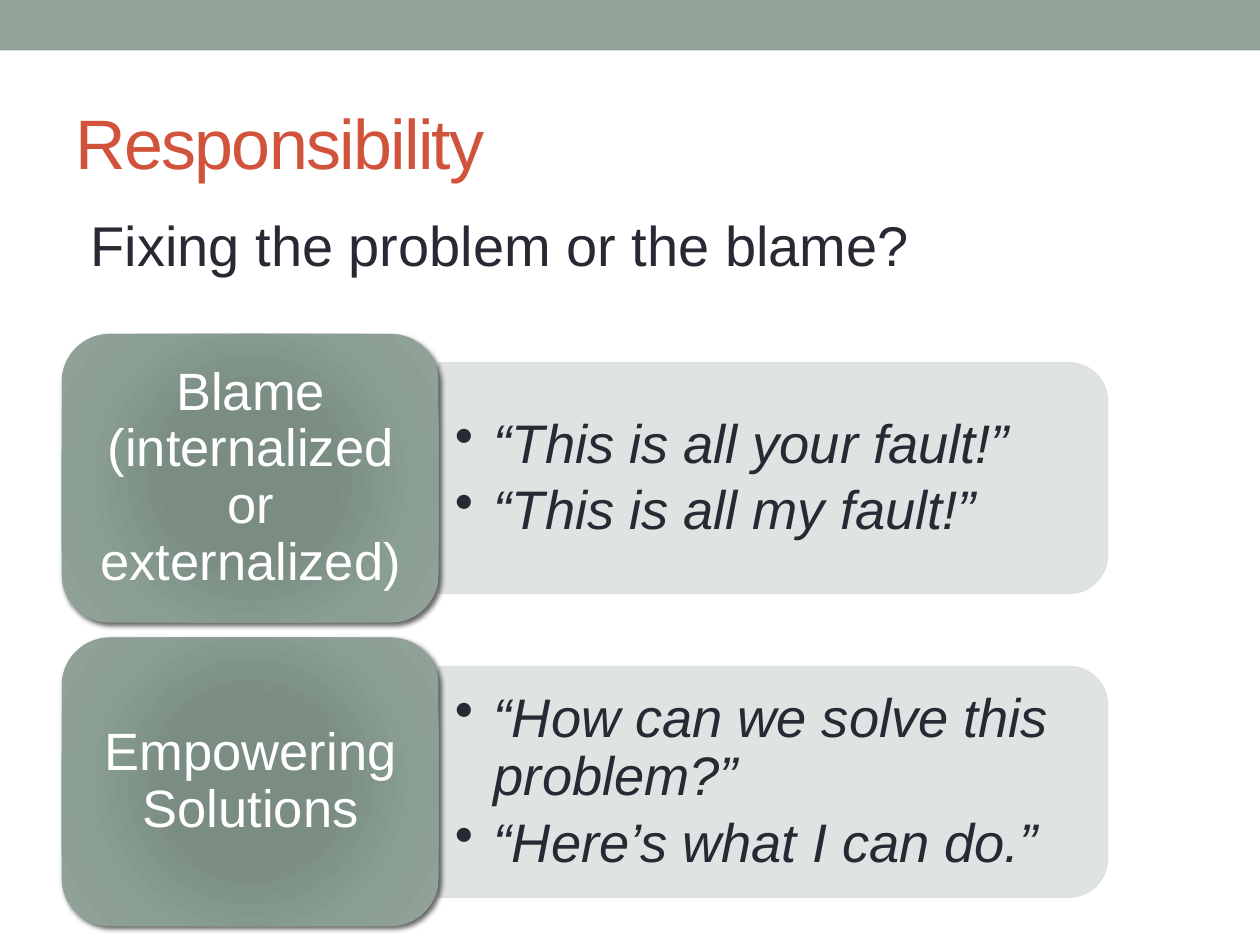
"""Build the Responsibility slide: blame compared with empowering solutions."""
from lxml.etree import SubElement
from pptx import Presentation
from pptx.dml.color import RGBColor
from pptx.enum.shapes import MSO_SHAPE as Shape
from pptx.enum.text import MSO_ANCHOR as Anchor, MSO_AUTO_SIZE as AutoSize, PP_ALIGN as Align
from pptx.oxml import parse_xml
from pptx.oxml.ns import nsdecls, qn
from pptx.util import Inches, Pt

INK, SAGE, PALE, WHITE, RUST = "292934", "93A299", "DCE0DE", "FFFFFF", "D2533C"
STOPS = [(0, "7B8E82"), (34, "7B8D83"), (70, "8A9E92"), (100, SAGE)]
ROWS = [
    ("Blame (internalized or externalized)",
     ["“This is all your fault!”", "“This is all my fault!”"]),
    ("Empowering Solutions",
     ["“How can we solve this problem?”", "“Here’s what I can do.”"]),
]
LEFT, SPLIT, RIGHT = 0.49, 3.48, 8.79
TOP, ROW_HEIGHT, ROW_STEP = 2.65, 2.29, 2.41
PANEL_HEIGHT = 0.8 * ROW_HEIGHT


def color(value):
    return RGBColor.from_string(value)


def write(box, lines, size, ink, inset=(0.1, 0.05), anchor=Anchor.MIDDLE,
          align=Align.LEFT, after=0, bullet=False):
    frame = box.text_frame
    frame.word_wrap, frame.vertical_anchor = True, anchor
    frame.margin_left = frame.margin_right = Inches(inset[0])
    frame.margin_top = frame.margin_bottom = Inches(inset[1])
    for index, line in enumerate(lines):
        para = frame.add_paragraph() if index else frame.paragraphs[0]
        para.alignment = align
        if after:
            para.line_spacing, para.space_after = 0.9, Pt(after)
        if bullet:
            para.level = 1
            props = para._p.get_or_add_pPr()
            props.set("marL", str(Inches(0.31)))
            props.set("indent", str(Inches(-0.31)))
            SubElement(props, qn("a:buChar")).set("char", "•")
        span = para.add_run()
        span.text = line
        span.font.name, span.font.size = "Arial", Pt(size)
        span.font.italic = bullet
        span.font.color.rgb = color(ink)
    return frame


deck = Presentation()
deck.slide_width, deck.slide_height = Inches(10), Inches(7.5)
page = deck.slides.add_slide(deck.slide_layouts[5])
shapes = page.shapes

band = shapes.add_shape(Shape.RECTANGLE, 0, 0, deck.slide_width, Inches(0.4))
band.shadow.inherit = False
band.fill.solid()
band.fill.fore_color.rgb = color(SAGE)
band.line.fill.background()

title = shapes.title
title.left, title.top, title.width, title.height = map(Inches, (0.5, 0.58, 9, 1.08))
heading = write(title, ["Responsibility"], 40, RUST)
heading.paragraphs[0].runs[0].font._element.set("spc", "-100")

for row, (label, quotes) in enumerate(ROWS):
    top = TOP + row * ROW_STEP
    middle = top + ROW_HEIGHT / 2
    length = RIGHT - SPLIT

    panel = shapes.add_shape(
        Shape.ROUND_2_SAME_RECTANGLE,
        Inches((SPLIT + RIGHT - PANEL_HEIGHT) / 2), Inches(middle - length / 2),
        Inches(PANEL_HEIGHT), Inches(length))
    panel.rotation = 90
    panel.shadow.inherit = False
    panel.fill.solid()
    panel.fill.fore_color.rgb = color(PALE)
    panel.line.color.rgb = color(PALE)
    panel.line.width = Pt(0.75)
    for tint in panel._element.spPr.iter(qn("a:srgbClr")):
        SubElement(tint, qn("a:alpha")).set("val", "90000")

    quote_box = shapes.add_textbox(
        Inches(SPLIT), Inches(middle - 0.82), Inches(5.22), Inches(1.65))
    write(quote_box, quotes, 31, INK, (0.13, 0.06), after=4.65, bullet=True)

    card = shapes.add_shape(Shape.ROUNDED_RECTANGLE, Inches(LEFT), Inches(top),
                            Inches(SPLIT - LEFT), Inches(ROW_HEIGHT))
    card.line.fill.background()
    stops = "".join(f'<a:gs pos="{share * 1000}"><a:srgbClr val="{tone}"/></a:gs>'
                    for share, tone in STOPS)
    card._element.spPr.find(qn("a:prstGeom")).addnext(parse_xml(
        f'<a:gradFill {nsdecls("a")} rotWithShape="1"><a:gsLst>{stops}</a:gsLst>'
        '<a:path path="circle"><a:fillToRect l="100000" t="100000" r="100000" b="100000"/>'
        '</a:path></a:gradFill>'))
    card._element.spPr.append(parse_xml(
        f'<a:effectLst {nsdecls("a")}><a:outerShdw blurRad="{Pt(3)}" dist="{Pt(2)}" '
        'dir="2700000" algn="br" rotWithShape="0"><a:srgbClr val="000000">'
        '<a:alpha val="60000"/></a:srgbClr></a:outerShdw></a:effectLst>'))

    label_box = shapes.add_textbox(Inches(LEFT + 0.12), Inches(top + 0.11),
                                   Inches(2.76), Inches(2.07))
    write(label_box, [label], 30, WHITE, (0.12, 0.06), align=Align.CENTER, after=10.5)

question = shapes.add_textbox(Inches(0.63), Inches(1.62), Inches(9.23), Inches(0.63))
write(question, ["Fixing the problem or the blame?"], 32, INK, (0.09, 0.05),
      anchor=Anchor.TOP).auto_size = AutoSize.SHAPE_TO_FIT_TEXT

deck.save("out.pptx")
